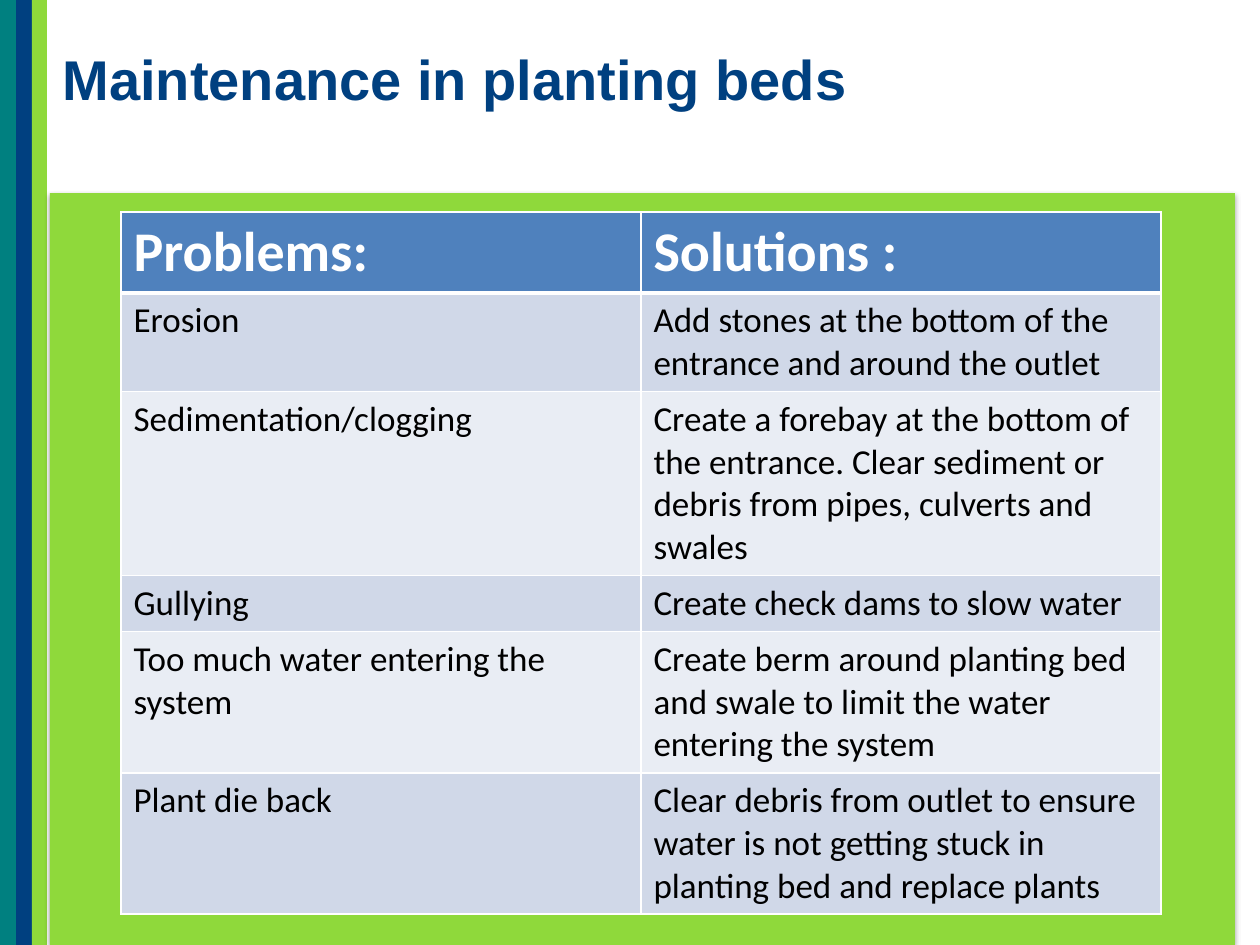
import pptx
import pptx.util
import pptx.dml.color
import pptx.enum.shapes
import pptx.enum.text
import pptx.oxml
import pptx.oxml.ns
import lxml.etree

PX = 914400 / 126
COLORS = {
    "teal": "008080", "navy": "004080", "green": "8FD93B",
    "header": "4F81BD", "dark band": "D0D8E8", "light band": "E9EDF4",
    "white": "FFFFFF", "black": "000000",
}
ROWS = [
    ("Problems:", "Solutions :"),
    ("Erosion", "Add stones at the bottom of the entrance and around the outlet"),
    ("Sedimentation/clogging",
     "Create a forebay at the bottom of the entrance. "
     "Clear sediment or debris from pipes, culverts and swales"),
    ("Gullying", "Create check dams to slow water"),
    ("Too much water entering the system",
     "Create berm around planting bed and swale to limit the water entering the system"),
    ("Plant die back",
     "Clear debris from outlet to ensure water is not getting stuck "
     "in planting bed and replace plants"),
]
ROW_HEIGHTS = [81, 98, 184, 56, 141, 141]


def px(*lengths):
    """Turn pixel lengths into EMU."""
    return [pptx.util.Emu(round(length * PX)) for length in lengths]


def add_rectangle(box, color):
    shape = slide.shapes.add_shape(
        pptx.enum.shapes.MSO_SHAPE.RECTANGLE, *px(*box))
    shape.shadow.inherit = False
    shape.fill.solid()
    shape.fill.fore_color.rgb = pptx.dml.color.RGBColor.from_string(COLORS[color])
    shape.line.fill.background()
    return shape


presentation = pptx.Presentation()
presentation.slide_width, presentation.slide_height = px(1260, 945)
slide = presentation.slides.add_slide(presentation.slide_layouts[5])

# Side stripes and content panel
for index, color in enumerate(["teal", "navy", "green"]):
    add_rectangle((index * 16, 0, 16 if index < 2 else 15, 945), color)

panel = add_rectangle((50, 193, 1185, 752), "green")
effects = panel._element.spPr.find(pptx.oxml.ns.qn("a:effectLst"))
effects.append(pptx.oxml.parse_xml(
    f'<a:outerShdw {pptx.oxml.ns.nsdecls("a")} blurRad="39370" dist="22860"'
    ' dir="5400000" rotWithShape="0">'
    f'<a:srgbClr val="{COLORS["black"]}"><a:alpha val="35000"/></a:srgbClr>'
    "</a:outerShdw>"))

# Title
title = slide.shapes.title
title.left, title.top, title.width, title.height = px(50, 33, 1210, 159)
frame = title.text_frame
frame.text = "Maintenance in planting beds"
frame.word_wrap = True
frame.auto_size = pptx.enum.text.MSO_AUTO_SIZE.NONE
frame.vertical_anchor = pptx.enum.text.MSO_ANCHOR.TOP
frame.margin_top = px(11)[0]
paragraph = frame.paragraphs[0]
paragraph.alignment = pptx.enum.text.PP_ALIGN.LEFT
paragraph.font.name = "Arial"
paragraph.font.size = pptx.util.Pt(32)
paragraph.font.bold = True
paragraph.font.color.rgb = pptx.dml.color.RGBColor.from_string(COLORS["navy"])

# Problems and solutions
table = slide.shapes.add_table(
    len(ROWS), 2, *px(121, 212, 1040, sum(ROW_HEIGHTS))).table
for column in table.columns:
    column.width = px(520)[0]

for row_index, (texts, height) in enumerate(zip(ROWS, ROW_HEIGHTS)):
    table.rows[row_index].height = px(height)[0]
    is_header = row_index == 0
    band = "header" if is_header else "dark band" if row_index % 2 else "light band"
    for column_index, text in enumerate(texts):
        cell = table.cell(row_index, column_index)
        cell.text = text
        properties = cell._tc.get_or_add_tcPr()
        for side in "LRTB":
            thick = (is_header and side == "B") or (row_index == 1 and side == "T")
            line = lxml.etree.SubElement(
                properties, pptx.oxml.ns.qn(f"a:ln{side}"),
                w=str(pptx.util.Pt(3 if thick else 1)))
            fill = lxml.etree.SubElement(line, pptx.oxml.ns.qn("a:solidFill"))
            lxml.etree.SubElement(
                fill, pptx.oxml.ns.qn("a:srgbClr"), val=COLORS["white"])
        cell.fill.solid()
        cell.fill.fore_color.rgb = pptx.dml.color.RGBColor.from_string(COLORS[band])
        font = cell.text_frame.paragraphs[0].font
        font.name = "Calibri"
        font.size = pptx.util.Pt(32 if is_header else 20)
        font.bold = is_header
        font.color.rgb = pptx.dml.color.RGBColor.from_string(
            COLORS["white" if is_header else "black"])

presentation.save("out.pptx")
